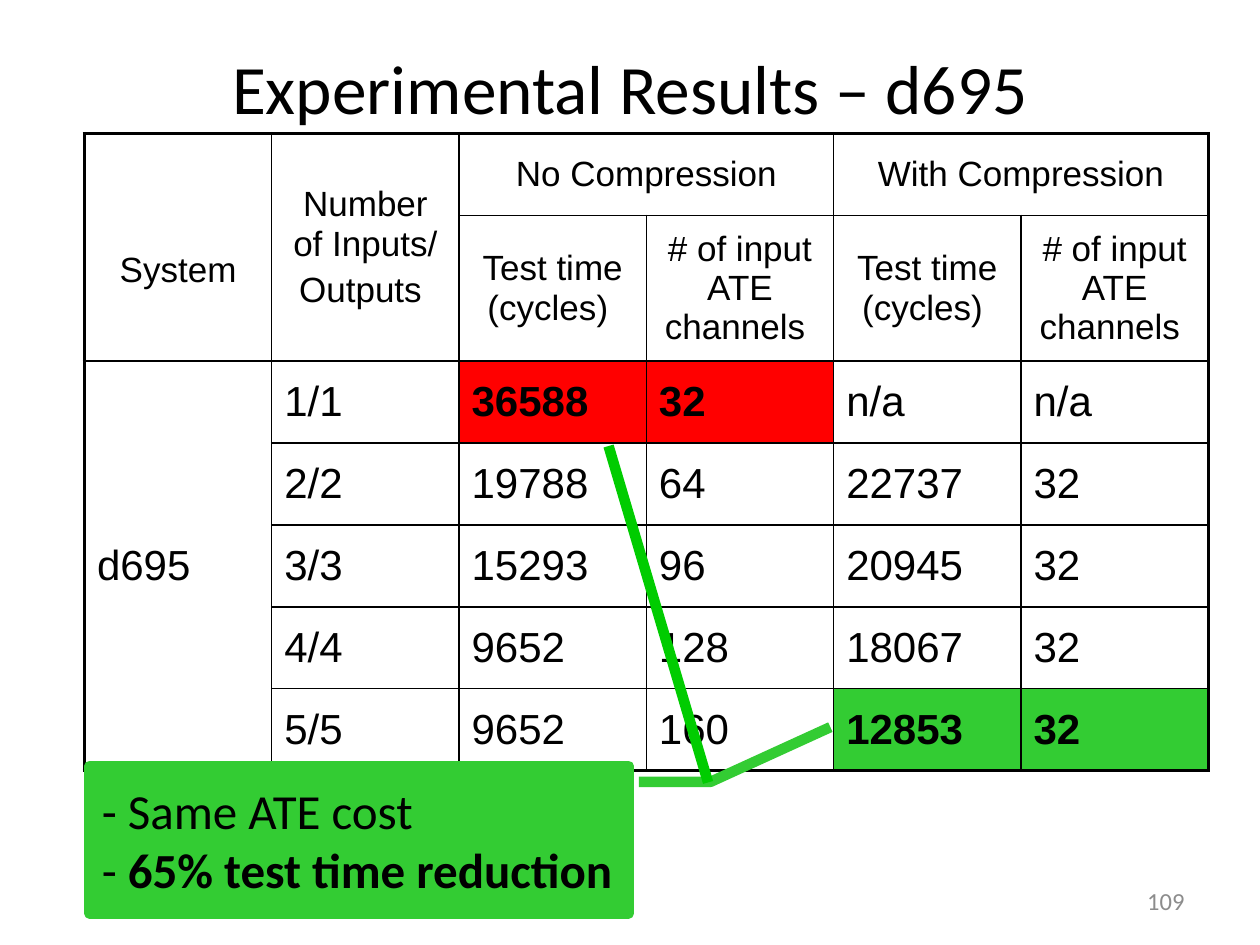
from dataclasses import dataclass

from lxml.etree import SubElement
from pptx import Presentation
from pptx.dml.color import RGBColor
from pptx.enum.shapes import MSO_CONNECTOR, MSO_SHAPE
from pptx.enum.text import MSO_ANCHOR, PP_ALIGN
from pptx.oxml import parse_xml
from pptx.oxml.ns import nsdecls, qn
from pptx.util import Inches, Pt


@dataclass(frozen=True)
class Theme:
    ink: str = "000000"
    muted: str = "8C8C8C"
    baseline: str = "FF0000"
    improved: str = "33CC33"
    pointer: str = "00CC00"
    text_font: str = "Calibri"
    table_font: str = "Arial"
    title_size: float = 39.6
    callout_size: float = 28
    body_size: float = 24
    header_size: float = 20
    number_size: float = 14
    thin: float = 1
    thick: float = 2.25
    heavy: float = 6


class SlideBuilder:
    def __init__(self, slide, theme):
        self.slide = slide
        self.theme = theme

    def add_run(self, paragraph, text, size, font=None, color=None, bold=False):
        run = paragraph.add_run()
        run.text = text
        run.font.name = font or self.theme.text_font
        run.font.size = Pt(size)
        run.font.bold = bold
        run.font.color.rgb = RGBColor.from_string(color or self.theme.ink)

    def place(self, shape, left, top, width, height):
        shape.left, shape.top = Inches(left), Inches(top)
        shape.width, shape.height = Inches(width), Inches(height)

    def title(self, text, *box):
        shape = self.slide.shapes.title
        self.place(shape, *box)
        shape.text_frame.vertical_anchor = MSO_ANCHOR.MIDDLE
        paragraph = shape.text_frame.paragraphs[0]
        paragraph.alignment = PP_ALIGN.CENTER
        self.add_run(paragraph, text, self.theme.title_size)

    def slide_number(self, text, *box):
        shape = self.slide.shapes.add_textbox(*map(Inches, box))
        shape.text_frame.word_wrap = True
        shape.text_frame.vertical_anchor = MSO_ANCHOR.MIDDLE
        paragraph = shape.text_frame.paragraphs[0]
        paragraph.alignment = PP_ALIGN.RIGHT
        self.add_run(paragraph, text, self.theme.number_size, color=self.theme.muted)

    def border(self, cell, sides):
        properties = cell._tc.get_or_add_tcPr()
        for side, width in sides.items():
            properties.append(parse_xml(
                f'<a:ln{side} {nsdecls("a")} w="{Pt(width)}"><a:solidFill>'
                f'<a:srgbClr val="{self.theme.ink}"/></a:solidFill></a:ln{side}>'))

    def table(self, rows, header_rows, merges, fills, row_heights, left, top, width):
        theme = self.theme
        row_count, column_count = len(rows), len(rows[0])
        table = self.slide.shapes.add_table(
            row_count, column_count, Inches(left), Inches(top),
            Inches(width), Inches(sum(row_heights))).table
        table.first_row = table.horz_banding = False
        for column in table.columns:
            column.width = Inches(width / column_count)
        for row, height in zip(table.rows, row_heights):
            row.height = Inches(height)
        for first, last in merges:
            table.cell(*first).merge(table.cell(*last))

        for r, values in enumerate(rows):
            for c, value in enumerate(values):
                cell = table.cell(r, c)
                if cell.is_spanned:
                    continue
                last_row = r + cell.span_height if cell.is_merge_origin else r + 1
                last_column = c + cell.span_width if cell.is_merge_origin else c + 1
                outer = {"L": c == 0, "R": last_column == column_count,
                         "T": r == 0, "B": last_row == row_count}
                self.border(cell, {side: theme.thick if edge else theme.thin
                                   for side, edge in outer.items()})
                fill = fills.get((r, c))
                if fill:
                    cell.fill.solid()
                    cell.fill.fore_color.rgb = RGBColor.from_string(fill)
                else:
                    cell.fill.background()
                cell.vertical_anchor = MSO_ANCHOR.MIDDLE
                is_header = r < header_rows
                size = theme.header_size if is_header else theme.body_size
                for index, line in enumerate(value.split("\n")):
                    frame = cell.text_frame
                    paragraph = frame.add_paragraph() if index else frame.paragraphs[0]
                    paragraph.alignment = PP_ALIGN.CENTER if is_header else PP_ALIGN.LEFT
                    paragraph.space_before = Pt(size * 0.2)
                    self.add_run(paragraph, line, size, theme.table_font, bold=bool(fill))
        return table

    def callout(self, lines, adjustments, *box):
        shape = self.slide.shapes.add_shape(MSO_SHAPE.LINE_CALLOUT_2, *map(Inches, box))
        shape.shadow.inherit = False
        for index, value in enumerate(adjustments):
            shape.adjustments[index] = value
        color = RGBColor.from_string(self.theme.improved)
        shape.fill.solid()
        shape.fill.fore_color.rgb = color
        shape.line.color.rgb = color
        shape.line.width = Pt(self.theme.heavy)
        frame = shape.text_frame
        frame.word_wrap = True
        frame.vertical_anchor = MSO_ANCHOR.MIDDLE
        for index, runs in enumerate(lines):
            paragraph = frame.add_paragraph() if index else frame.paragraphs[0]
            paragraph.alignment = PP_ALIGN.LEFT
            for text, bold in runs:
                self.add_run(paragraph, text, self.theme.callout_size, bold=bold)

    def line(self, start, end):
        connector = self.slide.shapes.add_connector(
            MSO_CONNECTOR.STRAIGHT, *map(Inches, start + end))
        connector.line.color.rgb = RGBColor.from_string(self.theme.pointer)
        connector.line.width = Pt(self.theme.heavy)
        SubElement(connector._element.spPr, qn("a:effectLst"))


def main():
    presentation = Presentation()
    presentation.slide_width, presentation.slide_height = Inches(10), Inches(7.5)
    theme = Theme()
    slide = presentation.slides.add_slide(presentation.slide_layouts[5])
    builder = SlideBuilder(slide, theme)

    # Title and page number
    builder.title("Experimental Results – d695", 0.5, 0.3, 9, 0.78)
    builder.slide_number("109", 7.17, 6.95, 2.33, 0.4)

    # Results table
    measures = ["Test time (cycles) ", "# of input ATE channels "]
    rows = [
        ["System", "Number of Inputs/\nOutputs ", "No Compression", "", "With Compression", ""],
        ["", ""] + measures * 2,
        ["d695", "1/1", "36588", "32", "n/a", "n/a"],
        ["", "2/2", "19788", "64", "22737", "32"],
        ["", "3/3", "15293", "96", "20945", "32"],
        ["", "4/4", "9652", "128", "18067", "32"],
        ["", "5/5", "9652", "160", "12853", "32"],
    ]
    merges = [((0, 0), (1, 0)), ((0, 1), (1, 1)), ((0, 2), (0, 3)),
              ((0, 4), (0, 5)), ((2, 0), (6, 0))]
    fills = {(2, 2): theme.baseline, (2, 3): theme.baseline,
             (6, 4): theme.improved, (6, 5): theme.improved}
    table = builder.table(rows, 2, merges, fills, [0.65, 1.12] + [0.65] * 5,
                          0.67, 1.06, 8.92)
    table.cell(0, 0).margin_top = Inches(0.42)  # "System" sits below the middle

    # Conclusion callout and pointer to the baseline result
    builder.callout([[("- Same ATE cost", False)],
                     [("- ", False), ("65% test time reduction", True)]],
                    [0.107, 1.019, 0.107, 1.152, -0.264, 1.374],
                    0.71, 6.08, 4.28, 1.17)
    builder.line((5.62, 6.21), (4.83, 3.54))

    presentation.save("out.pptx")


if __name__ == "__main__":
    main()
